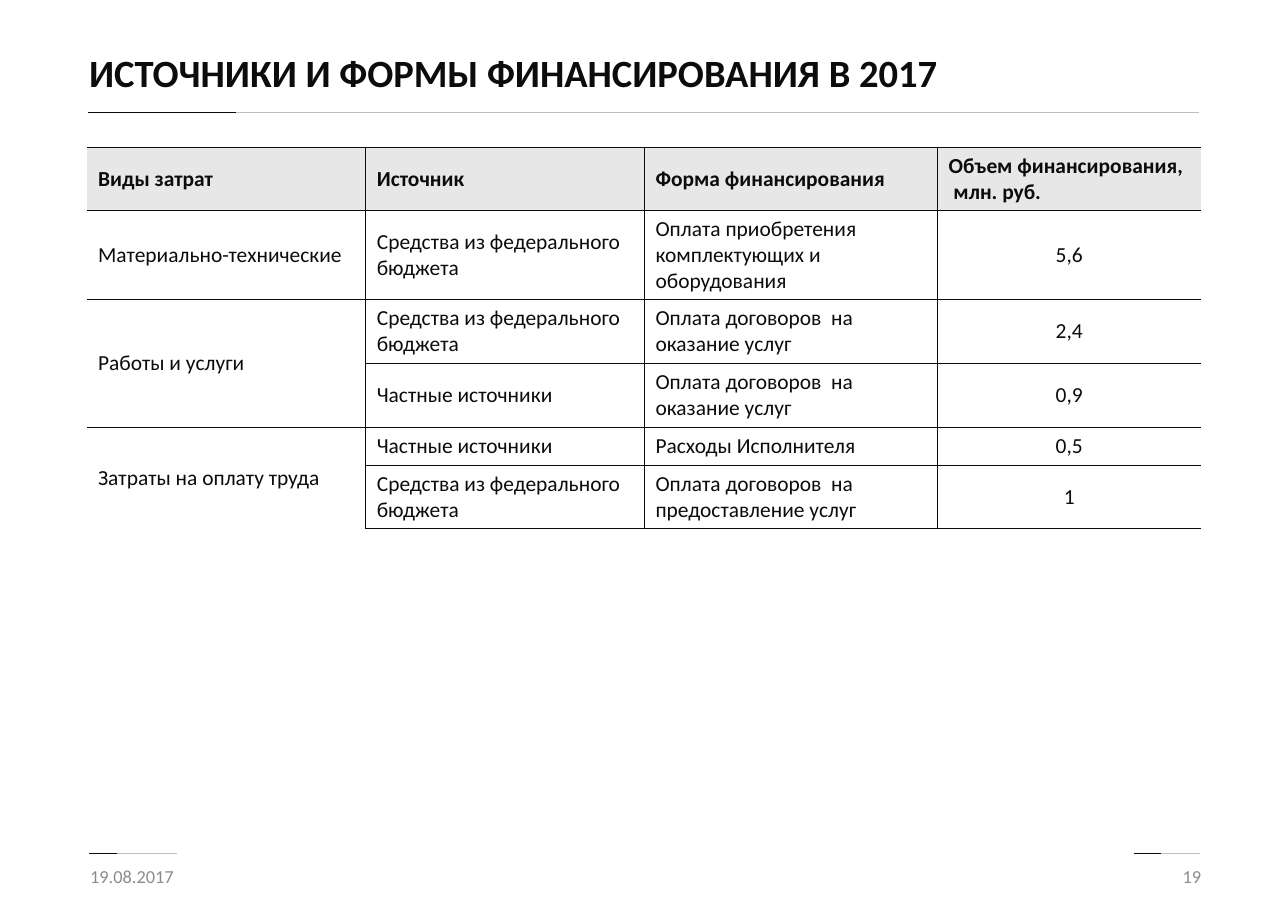
from lxml.etree import SubElement
from pptx import Presentation
from pptx.dml.color import RGBColor
from pptx.enum.shapes import MSO_CONNECTOR
from pptx.enum.text import MSO_ANCHOR, PP_ALIGN
from pptx.oxml import parse_xml
from pptx.oxml.ns import nsdecls, qn
from pptx.util import Pt

INK = RGBColor(0x0C, 0x0C, 0x0C)
MUTED = RGBColor(0x8C, 0x8C, 0x8C)
PALE = RGBColor(0xBF, 0xBF, 0xBF)
HEADER = RGBColor(0xE7, 0xE7, 0xE7)

TITLE = {"size": Pt(25.2), "bold": True}
FOOTER = {"size": Pt(12), "bold": False}
HEADING = {"size": Pt(14), "bold": True}
BODY = {"size": Pt(14), "bold": False}

FEDERAL = "Средства из федерального бюджета"
PRIVATE = "Частные источники"
SERVICES = "Оплата договоров  на оказание услуг"
COSTS = [
    ["Виды затрат", "Источник", "Форма финансирования", "Объем финансирования,\n млн. руб."],
    ["Материально-технические", FEDERAL, "Оплата приобретения комплектующих и оборудования", "5,6"],
    ["Работы и услуги", FEDERAL, SERVICES, "2,4"],
    [None, PRIVATE, SERVICES, "0,9"],
    ["Затраты на оплату труда", PRIVATE, "Расходы Исполнителя", "0,5"],
    [None, FEDERAL, "Оплата договоров  на предоставление услуг", "1"],
]
COLUMN_WIDTHS = [253, 253, 266, 239]
ROW_HEIGHTS = [57, 81, 58, 58, 35, 57]


class FinanceSlide:
    """Draws the elements of one slide in a shared style, in px of 1/100 inch."""

    scale = 9144
    family = "Calibri"

    def __init__(self, deck, width, height):
        deck.slide_width, deck.slide_height = self.emu(width, height)
        self.shapes = deck.slides.add_slide(deck.slide_layouts[6]).shapes

    def emu(self, *lengths):
        return [length * self.scale for length in lengths]

    def typeset(self, frame, wording, style, color=INK, align=PP_ALIGN.LEFT, spacing=1.0):
        frame.text = wording
        for paragraph in frame.paragraphs:
            paragraph.alignment = align
            paragraph.line_spacing = spacing
            for run in paragraph.runs:
                for name, value in {"name": self.family, **style}.items():
                    setattr(run.font, name, value)
                run.font.color.rgb = color

    def text(self, box, wording, style, **options):
        frame = self.shapes.add_textbox(*self.emu(*box)).text_frame
        frame.word_wrap = True
        frame.vertical_anchor = MSO_ANCHOR.MIDDLE
        self.typeset(frame, wording, style, **options)

    def rule(self, left, right, accent_end, top):
        for end, color in ((right, PALE), (accent_end, INK)):
            stroke = self.shapes.add_connector(
                MSO_CONNECTOR.STRAIGHT, *self.emu(left, top, end, top))
            stroke.line.color.rgb = color
            stroke.line.width = Pt(0.5)
            SubElement(stroke._element.spPr, qn("a:effectLst"))

    def borders(self, cell, shown):
        for index, side in enumerate("LRTB"):
            paint = (f'<a:solidFill><a:srgbClr val="{INK}"/></a:solidFill>'
                     if side in shown else "<a:noFill/>")
            edge = parse_xml(f'<a:ln{side} {nsdecls("a")} w="{Pt(0.75)}">{paint}</a:ln{side}>')
            cell._tc.get_or_add_tcPr().insert(index, edge)

    def table(self, left, top, widths, heights, content):
        grid = self.shapes.add_table(
            len(heights), len(widths),
            *self.emu(left, top, sum(widths), sum(heights))).table
        grid.first_row = grid.horz_banding = False
        for column, width in zip(grid.columns, self.emu(*widths)):
            column.width = width
        for row, height in zip(grid.rows, self.emu(*heights)):
            row.height = height
        last = len(widths) - 1
        for r, entries in enumerate(content):
            for c, wording in enumerate(entries):
                cell = grid.cell(r, c)
                cell.vertical_anchor = MSO_ANCHOR.MIDDLE
                if r == 0:
                    cell.fill.solid()
                    cell.fill.fore_color.rgb = HEADER
                else:
                    cell.fill.background()
                continues = r + 1 < len(content) and content[r + 1][c] is None
                shown = ("L" if c else "") + ("R" if c < last else "")
                shown += ("" if wording is None else "T") + ("" if continues else "B")
                self.borders(cell, shown)
                if wording is None:
                    grid.cell(r - 1, c).merge(cell)
                    continue
                amount = r and c == last
                self.typeset(cell.text_frame, wording, BODY if r else HEADING,
                             align=PP_ALIGN.CENTER if amount else PP_ALIGN.LEFT)


def main():
    deck = Presentation()
    finance = FinanceSlide(deck, 1169, 827)
    finance.rule(80, 1088, 214, 102)
    finance.rule(1029, 1089, 1054, 775)
    finance.rule(81, 161, 106, 775)
    finance.text((71, 28, 797, 80), "ИСТОЧНИКИ И ФОРМЫ ФИНАНСИРОВАНИЯ В 2017", TITLE, spacing=0.9)
    finance.text((72, 773, 263, 44), "19.08.2017", FOOTER, color=MUTED)
    finance.text((837, 773, 263, 44), "19", FOOTER, color=MUTED, align=PP_ALIGN.RIGHT)
    finance.table(79, 134, COLUMN_WIDTHS, ROW_HEIGHTS, COSTS)
    deck.save("out.pptx")


if __name__ == "__main__":
    main()
